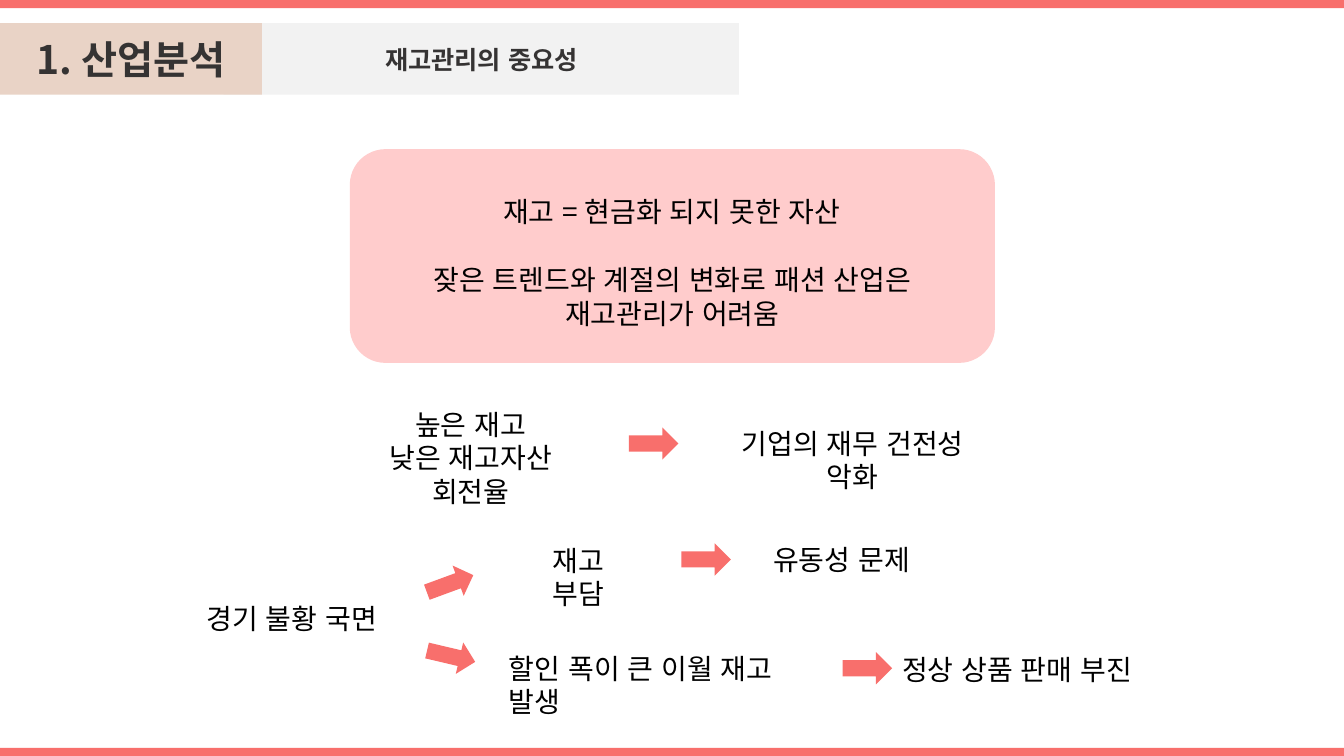
from dataclasses import dataclass

from lxml import etree
from pptx import Presentation
from pptx import util as u
from pptx.dml.color import RGBColor
from pptx.enum import lang, shapes, text
from pptx.oxml.ns import qn

WIDTH = u.Inches(13.33)
HEIGHT = u.Inches(7.5)
FONT = "Noto Sans CJK KR"

CORAL = RGBColor(0xF8, 0x6F, 0x6C)
PINK = RGBColor(0xFF, 0xCC, 0xCC)
GREY = RGBColor(0xF2, 0xF2, 0xF2)
BEIGE = RGBColor(0xE9, 0xD3, 0xC6)
CHARCOAL = RGBColor(0x35, 0x33, 0x33)
BLACK = RGBColor(0x00, 0x00, 0x00)

RECTANGLE = shapes.MSO_SHAPE.RECTANGLE
ROUNDED = shapes.MSO_SHAPE.ROUNDED_RECTANGLE
ARROW = shapes.MSO_SHAPE.RIGHT_ARROW
CENTER = text.PP_ALIGN.CENTER
LEFT = text.PP_ALIGN.LEFT

BAR_HEIGHT = 1.07
HEADER_TOP, HEADER_HEIGHT = 3.07, 9.47
ARROW_WIDTH, ARROW_HEIGHT = 3.68, 4.27
LINE_HEIGHT, TWO_LINES = 5.87, 10.27
INSET, WRAP_INSET = 0.1, 0.15


@dataclass(frozen=True)
class Area:
    """Left, top, width and height in percent of the slide."""
    left: float
    top: float
    width: float
    height: float

    def lengths(self) -> tuple:
        return (int(WIDTH * self.left / 100), int(HEIGHT * self.top / 100),
                int(WIDTH * self.width / 100), int(HEIGHT * self.height / 100))


@dataclass(frozen=True)
class Panel:
    area: Area
    color: RGBColor
    kind: shapes.MSO_SHAPE = RECTANGLE
    rotation: float = 0
    title: str = ""
    size: int = 18


@dataclass(frozen=True)
class Label:
    area: Area
    lines: tuple
    alignment: text.PP_ALIGN = CENTER
    right_inset: float = INSET


def arrow(left: float, top: float, rotation: float = 0) -> Panel:
    return Panel(Area(left, top, ARROW_WIDTH, ARROW_HEIGHT), CORAL, ARROW, rotation)


PANELS = (
    Panel(Area(26.03, 19.73, 48, 28.27), PINK, ROUNDED),
    Panel(Area(0, 0, 100, BAR_HEIGHT), CORAL),
    Panel(Area(0, 100 - BAR_HEIGHT, 100, BAR_HEIGHT), CORAL),
    Panel(Area(16.65, HEADER_TOP, 38.33, HEADER_HEIGHT), GREY, title="재고관리의 중요성"),
    Panel(Area(0, HEADER_TOP, 19.5, HEADER_HEIGHT), BEIGE, title="1. 산업분석", size=28),
    arrow(46.8, 56.53),
    arrow(31.65, 75.07, 339.8),
    arrow(50.7, 71.87),
    arrow(31.73, 84.67, 13.3),
    arrow(62.7, 86.27),
)

LABELS = (
    Label(Area(28.73, 34.13, 42.6, TWO_LINES),
          ("잦은 트렌드와 계절의 변화로 패션 산업은 재고관리가 어려움",)),
    Label(Area(30.83, 25.07, 38.33, LINE_HEIGHT), ("재고 = 현금화 되지 못한 자산",)),
    Label(Area(25.28, 53.2, 19.88, TWO_LINES),
          ("높은 재고", "낮은 재고자산 회전율"), right_inset=WRAP_INSET),
    Label(Area(52.5, 55.73, 22.28, LINE_HEIGHT),
          ("기업의 재무 건전성 악화",), right_inset=WRAP_INSET),
    Label(Area(14.63, 78.93, 14.55, LINE_HEIGHT), ("경기 불황 국면",), LEFT),
    Label(Area(38.33, 71.2, 9.75, LINE_HEIGHT), ("재고 부담",), right_inset=WRAP_INSET),
    Label(Area(56.78, 71.07, 12.15, LINE_HEIGHT), ("유동성 문제",), LEFT),
    Label(Area(37.13, 85.47, 25.28, LINE_HEIGHT),
          ("할인 폭이 큰 이월 재고 발생",), LEFT, WRAP_INSET),
    Label(Area(66.38, 85.6, 18.98, LINE_HEIGHT), ("정상 상품 판매 부진",), LEFT),
)


def apply_format(target, values: dict) -> None:
    for name, value in values.items():
        setattr(target, name, value)


def write_line(paragraph, line: str, alignment: text.PP_ALIGN,
               size: int, color: RGBColor, bold: bool) -> None:
    paragraph.alignment = alignment
    run = paragraph.add_run()
    run.text = line
    apply_format(run.font, {"name": FONT, "size": u.Pt(size), "bold": bold,
                            "language_id": lang.MSO_LANGUAGE_ID.KOREAN})
    run.font.color.rgb = color
    east_asian = etree.SubElement(run.font._element, qn("a:ea"))
    east_asian.set("typeface", FONT)


def draw_panel(slide, panel: Panel) -> None:
    shape = slide.shapes.add_shape(panel.kind, *panel.area.lengths())
    shape.shadow.inherit = False
    shape.rotation = panel.rotation
    shape.fill.solid()
    shape.fill.fore_color.rgb = panel.color
    shape.line.fill.background()
    if panel.title:
        shape.text_frame.vertical_anchor = text.MSO_ANCHOR.MIDDLE
        write_line(shape.text_frame.paragraphs[0], panel.title, CENTER,
                   panel.size, CHARCOAL, True)


def draw_label(slide, label: Label) -> None:
    frame = slide.shapes.add_textbox(*label.area.lengths()).text_frame
    apply_format(frame, {"word_wrap": True,
                         "auto_size": text.MSO_AUTO_SIZE.SHAPE_TO_FIT_TEXT,
                         "margin_right": u.Inches(label.right_inset)})
    for index, line in enumerate(label.lines):
        paragraph = frame.add_paragraph() if index else frame.paragraphs[0]
        write_line(paragraph, line, label.alignment, 20, BLACK, False)


def main() -> None:
    presentation = Presentation()
    apply_format(presentation, {"slide_width": WIDTH, "slide_height": HEIGHT})
    slide = presentation.slides.add_slide(presentation.slide_layouts[6])
    for panel in PANELS:
        draw_panel(slide, panel)
    for label in LABELS:
        draw_label(slide, label)
    presentation.save("out.pptx")


if __name__ == "__main__":
    main()
